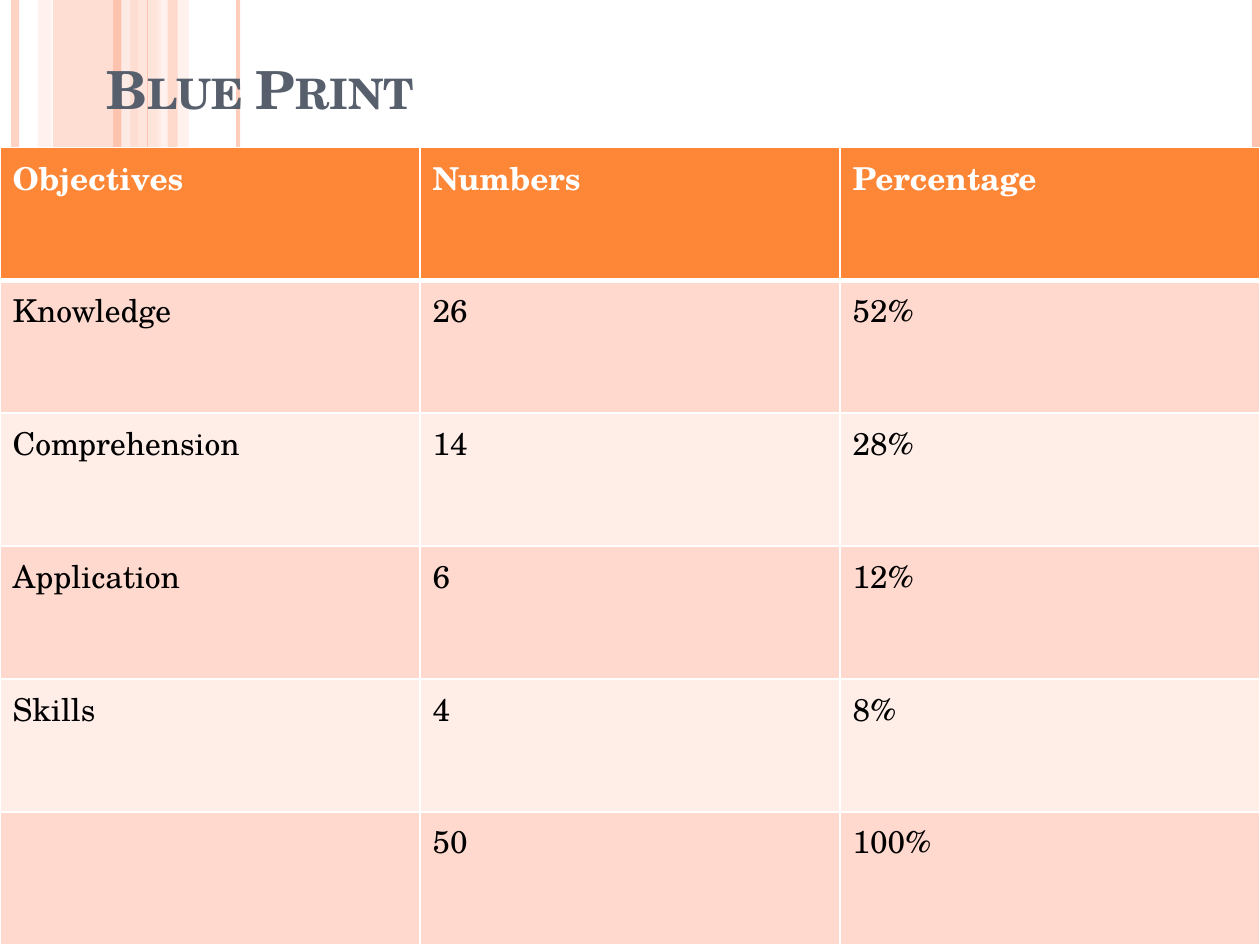
from dataclasses import dataclass

from lxml.etree import SubElement
from pptx import Presentation
from pptx.dml.color import RGBColor
from pptx.enum.shapes import MSO_CONNECTOR as Connector, MSO_SHAPE as Shape
from pptx.enum.text import MSO_ANCHOR as Anchor
from pptx.oxml import parse_xml
from pptx.oxml.ns import nsdecls, qn
from pptx.util import Inches, Pt


@dataclass(frozen=True)
class Theme:
    font: str = "TeX Gyre Schola"
    accent: str = "FE8637"
    strong: str = "FEC3AE"
    medium: str = "FFD9CE"
    pale: str = "FFEDE8"
    title: str = "575F6D"
    white: str = "FFFFFF"
    black: str = "000000"
    title_size: int = 30
    table_size: int = 18


@dataclass(frozen=True)
class Band:
    left: float
    width: float
    color: str
    opacity: int


@dataclass(frozen=True)
class Stripe:
    x: float
    weight: float
    color: str
    opacity: int = 100


THEME = Theme()
PAGE_WIDTH, PAGE_HEIGHT = 10, 7.5
TABLE_TOP = 1.17

BANDS = [
    Band(0.42, 0.67, THEME.strong, 54),
    Band(0.3, 0.11, THEME.medium, 36),
    Band(1.08, 0.2, THEME.medium, 70),
    Band(1.25, 0.25, THEME.pale, 71),
]
STRIPES = [
    Stripe(0.12, 4.5, THEME.strong, 73),
    Stripe(1, 4.5, THEME.pale, 83),
    Stripe(0.93, 4.5, THEME.strong),
    Stripe(1.89, 2.25, THEME.strong, 82),
    Stripe(1.17, 0.75, THEME.strong),
    Stripe(9.97, 4.5, THEME.strong),
]
FRONT_BAND = Band(1.33, 0.08, THEME.strong, 51)

ROWS = [
    ("Objectives", "Numbers", "Percentage"),
    ("Knowledge", "26", "52%"),
    ("Comprehension", "14", "28%"),
    ("Application", "6", "12%"),
    ("Skills", "4", "8%"),
    ("", "50", "100%"),
]


def paint(fill, color: str, opacity: int = 100) -> None:
    fill.solid()
    fill.fore_color.rgb = RGBColor.from_string(color)
    if opacity < 100:
        for node in fill._xPr.iter(qn("a:srgbClr")):
            SubElement(node, qn("a:alpha"), val=str(opacity * 1000))


def add_band(page, band: Band) -> None:
    box = page.shapes.add_shape(Shape.RECTANGLE, Inches(band.left), 0,
                                Inches(band.width), Inches(PAGE_HEIGHT))
    box.shadow.inherit = False
    box.line.fill.background()
    paint(box.fill, band.color, band.opacity)


def add_stripe(page, stripe: Stripe) -> None:
    x = Inches(stripe.x)
    line = page.shapes.add_connector(Connector.STRAIGHT, x, 0, x, Inches(PAGE_HEIGHT))
    line.line.width = Pt(stripe.weight)
    paint(line.line.fill, stripe.color, stripe.opacity)
    SubElement(line._element.spPr, qn("a:effectLst"))


def add_text(para, text: str, size: int, color: str, bold: bool):
    span = para.add_run()
    span.text = text
    span.font.name = THEME.font
    span.font.size = Pt(size)
    span.font.bold = bold
    span.font.color.rgb = RGBColor.from_string(color)
    return span


def add_title(page, text: str) -> None:
    box = page.shapes.add_textbox(Inches(0.75), Inches(0.33), Inches(8.5), Inches(0.67))
    frame = box.text_frame
    frame.word_wrap = True
    frame.vertical_anchor = Anchor.BOTTOM
    span = add_text(frame.paragraphs[0], text, THEME.title_size, THEME.title, True)
    span.font._element.set("cap", "small")


def set_borders(cell, top: float, bottom: float) -> None:
    properties = cell._tc.get_or_add_tcPr()
    sides = {"lnL": 1, "lnR": 1, "lnT": top, "lnB": bottom}
    for index, (side, weight) in enumerate(sides.items()):
        properties.insert(index, parse_xml(
            f'<a:{side} {nsdecls("a")} w="{Pt(weight)}"><a:solidFill>'
            f'<a:srgbClr val="{THEME.white}"/></a:solidFill></a:{side}>'))


def add_objectives_table(page, rows: list[tuple[str, ...]]) -> None:
    table = page.shapes.add_table(len(rows), len(rows[0]), 0, Inches(TABLE_TOP),
                                  Inches(PAGE_WIDTH), Inches(PAGE_HEIGHT - TABLE_TOP)).table
    for row_index, values in enumerate(rows):
        header = row_index == 0
        if header:
            fill, color = THEME.accent, THEME.white
        else:
            fill = THEME.medium if row_index % 2 else THEME.pale
            color = THEME.black
        for column_index, text in enumerate(values):
            cell = table.cell(row_index, column_index)
            paint(cell.fill, fill)
            set_borders(cell, top=3 if row_index == 1 else 1, bottom=3 if header else 1)
            if text:
                add_text(cell.text_frame.paragraphs[0], text, THEME.table_size, color, header)


def main() -> None:
    deck = Presentation()
    deck.slide_width, deck.slide_height = Inches(PAGE_WIDTH), Inches(PAGE_HEIGHT)
    page = deck.slides.add_slide(deck.slide_layouts[6])

    # Striped backdrop
    for band in BANDS:
        add_band(page, band)
    for stripe in STRIPES:
        add_stripe(page, stripe)
    add_band(page, FRONT_BAND)

    # Title and table
    add_title(page, "Blue Print")
    add_objectives_table(page, ROWS)

    deck.save("out.pptx")


if __name__ == "__main__":
    main()
